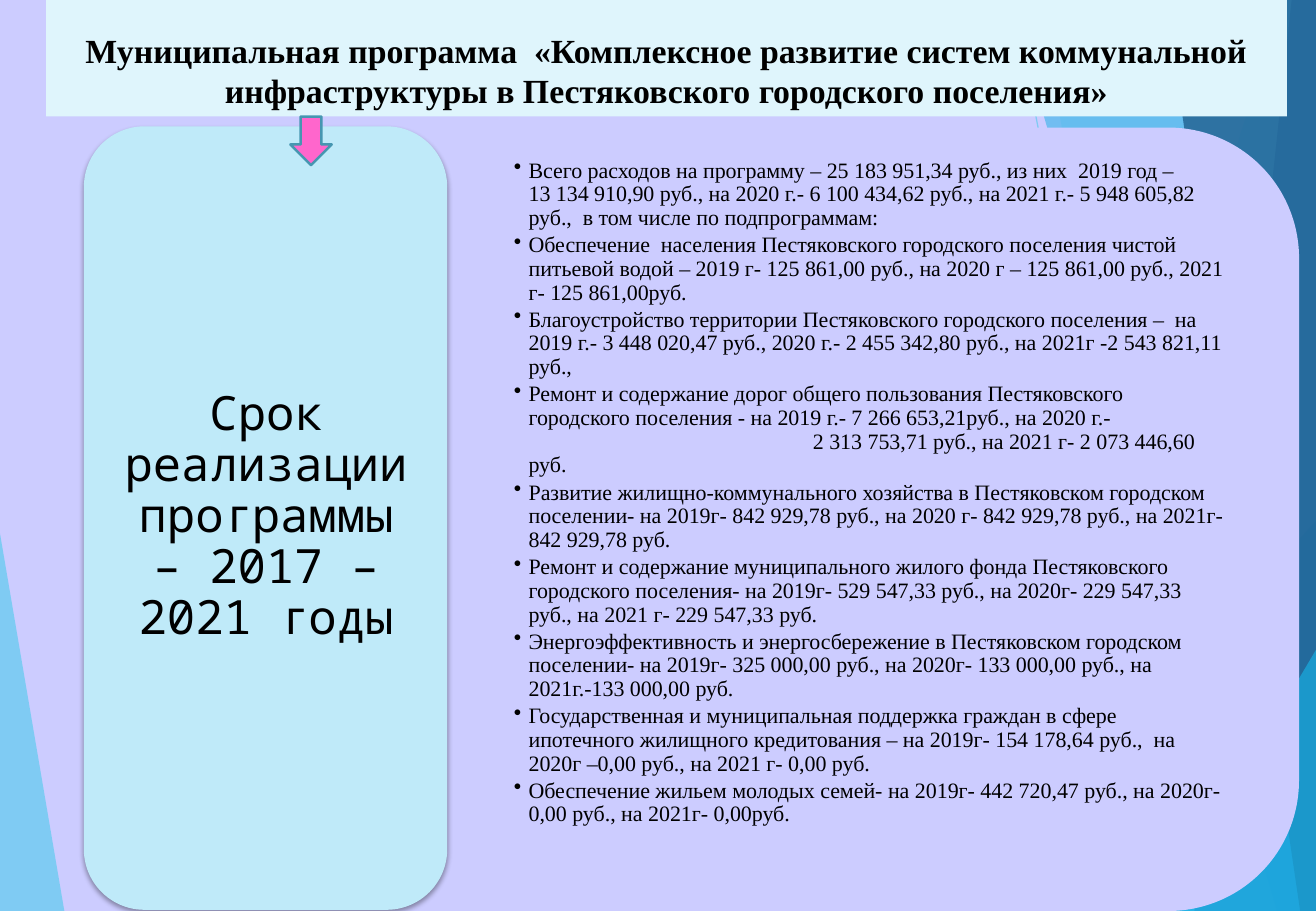
from lxml import etree
from pptx import Presentation
from pptx.dml.color import RGBColor
from pptx.enum.shapes import MSO_CONNECTOR, MSO_SHAPE
from pptx.enum.text import MSO_ANCHOR as Anchor, PP_ALIGN as Align
from pptx.oxml.ns import qn
from pptx.util import Inches, Pt

LAVENDER = RGBColor(0xCC, 0xCC, 0xFF)
SKY = RGBColor(0x5F, 0xCB, 0xEF)
AZURE = RGBColor(0x17, 0xB0, 0xE4)
BLUE = RGBColor(0x2E, 0x83, 0xC3)
NAVY = RGBColor(0x22, 0x62, 0x92)
TITLE_FILL = RGBColor(0xDF, 0xF5, 0xFC)
PERIOD_FILL = RGBColor(0xBF, 0xEA, 0xF9)
PINK = RGBColor(0xFF, 0x66, 0xCC)
ARROW_EDGE = RGBColor(0x46, 0x96, 0xB1)
BLACK = RGBColor(0, 0, 0)

SERIF = "Times New Roman"
MONO = "Noto Sans Mono"
WIDTH, HEIGHT = 10.83, 7.5

LEFT_FACET = ([(0, 4.39), (0.53, HEIGHT), (0, HEIGHT)], SKY, 70)
RAYS = [((6.08, HEIGHT), (WIDTH, 4.57)), ((8.34, 0), (9.79, HEIGHT))]
CORNER = (WIDTH, HEIGHT)
RIGHT_FACETS = [
    ([(10.56, 0), (8.17, HEIGHT), CORNER, (WIDTH, 0)], SKY, 36),
    ([(8.54, 0), (9.96, HEIGHT), CORNER, (WIDTH, 0)], SKY, 20),
    ([(7.86, HEIGHT), (WIDTH, 4.29), CORNER], AZURE, 66),
    ([(8.31, 0), (10.51, HEIGHT), CORNER, (WIDTH, 0)], AZURE, 50),
    ([(10.63, 0), (9.83, HEIGHT), CORNER, (WIDTH, 0)], BLUE, 70),
    ([(9.59, 0), (10.7, HEIGHT), CORNER, (WIDTH, 0)], NAVY, 82),
    ([(9.56, HEIGHT), (WIDTH, 5.35), CORNER], AZURE, 66),
]

TITLE = ("Муниципальная программа  «Комплексное развитие систем коммунальной "
         "инфраструктуры в Пестяковского городского поселения»")
PERIOD = "Срок реализации программы – 2017 – 2021 годы"
EXPENSES = [
    "Всего расходов на программу – 25 183 951,34 руб., из них  2019 год –\v"
    "13 134 910,90 руб., на 2020 г.- 6 100 434,62 руб., на 2021 г.- 5 948 605,82 руб.,  "
    "в том числе по подпрограммам:",
    "Обеспечение  населения Пестяковского городского поселения чистой питьевой водой – "
    "2019 г- 125 861,00 руб., на 2020 г – 125 861,00 руб., 2021 г- 125 861,00руб.",
    "Благоустройство территории Пестяковского городского поселения –  на 2019 г.- "
    "3 448 020,47 руб., 2020 г.- 2 455 342,80 руб., на 2021г -2 543 821,11 руб.,",
    "Ремонт и содержание дорог общего пользования Пестяковского городского поселения - "
    "на 2019 г.- 7 266 653,21руб., на 2020 г.-\v\t"
    "2 313 753,71 руб., на 2021 г- 2 073 446,60 руб.",
    "Развитие жилищно-коммунального хозяйства в Пестяковском городском поселении- "
    "на 2019г- 842 929,78 руб., на 2020 г- 842 929,78 руб., на 2021г- 842 929,78 руб.",
    "Ремонт и содержание муниципального жилого фонда Пестяковского городского поселения- "
    "на 2019г- 529 547,33 руб., на 2020г- 229 547,33 руб., на 2021 г- 229 547,33 руб.",
    "Энергоэффективность и энергосбережение в Пестяковском городском поселении- "
    "на 2019г- 325 000,00 руб., на 2020г- 133 000,00 руб., на 2021г.-133 000,00 руб.",
    "Государственная и муниципальная поддержка граждан в сфере ипотечного жилищного "
    "кредитования – на 2019г- 154 178,64 руб.,  на 2020г –0,00 руб., на 2021 г- 0,00 руб.",
    "Обеспечение жильем молодых семей- на 2019г- 442 720,47 руб., на 2020г- 0,00 руб., "
    "на 2021г- 0,00руб.",
]


def add_child(parent, tag, **attributes):
    return etree.SubElement(parent, qn(tag), {k: str(v) for k, v in attributes.items()})


def set_opacity(element, percent):
    color = next(element.iter(qn("a:srgbClr")))
    add_child(color, "a:alpha", val=percent * 1000)


def paint(shape, color):
    shape.shadow.inherit = False
    shape.fill.solid()
    shape.fill.fore_color.rgb = color
    shape.line.fill.background()


def add_facet(page, points, color, opacity):
    builder = page.shapes.build_freeform(*map(Inches, points[0]))
    builder.add_line_segments([(Inches(x), Inches(y)) for x, y in points[1:]])
    facet = builder.convert_to_shape()
    paint(facet, color)
    set_opacity(facet.fill._xPr, opacity)


def add_ray(page, start, end):
    ray = page.shapes.add_connector(MSO_CONNECTOR.STRAIGHT, *map(Inches, start + end))
    ray.line.color.rgb = SKY
    ray.line.width = Pt(0.75)
    properties = ray._element.spPr
    set_opacity(properties, 70)
    add_child(properties, "a:effectLst")


def add_panel(page, kind, place, color):
    panel = page.shapes.add_shape(kind, *map(Inches, place))
    paint(panel, color)
    return panel


def add_soft_shadow(shape):
    effects = shape._element.spPr.find(qn("a:effectLst"))
    shadow = add_child(effects, "a:outerShdw", blurRad=Pt(3), dist=Pt(2),
                       dir=90 * 60000, rotWithShape=0)
    add_child(add_child(shadow, "a:srgbClr", val="000000"), "a:alpha", val=35000)


def add_bullet(para, tab):
    """Hang a round bullet and set the tab stop for an indented line."""
    properties = para._p.get_or_add_pPr()
    properties.set("marL", str(Inches(0.12)))
    properties.set("indent", str(Inches(-0.12)))
    add_child(properties, "a:buChar", char="•")
    add_child(add_child(properties, "a:tabLst"), "a:tab", pos=Inches(tab), algn="l")


def write(frame, texts, size, font=SERIF, bold=False, align=Align.LEFT,
          anchor=Anchor.MIDDLE, margins=(0.1, 0.05), spacing=None, after=0, bullet_tab=None):
    frame.word_wrap = True
    frame.vertical_anchor = anchor
    frame.margin_left = frame.margin_right = Inches(margins[0])
    frame.margin_top = frame.margin_bottom = Inches(margins[1])
    for index, text in enumerate(texts):
        para = frame.add_paragraph() if index else frame.paragraphs[0]
        para.text = text
        para.alignment = align
        para.line_spacing = spacing
        para.space_after = Pt(after)
        if bullet_tab:
            add_bullet(para, bullet_tab)
        for span in para.runs:
            span.font.size = Pt(size)
            span.font.name = font
            span.font.bold = bold
            span.font.color.rgb = BLACK


def add_text(page, place, texts, **text_format):
    box = page.shapes.add_textbox(*map(Inches, place))
    write(box.text_frame, texts, **text_format)


def main():
    deck = Presentation()
    deck.slide_width, deck.slide_height = Inches(WIDTH), Inches(HEIGHT)
    page = deck.slides.add_slide(deck.slide_layouts[6])
    page.background.fill.solid()
    page.background.fill.fore_color.rgb = LAVENDER

    add_facet(page, *LEFT_FACET)
    for start, end in RAYS:
        add_ray(page, start, end)
    for facet in RIGHT_FACETS:
        add_facet(page, *facet)

    title = add_panel(page, MSO_SHAPE.RECTANGLE, (0.38, 0, 10.21, 0.96), TITLE_FILL)
    write(title.text_frame, [TITLE], size=20, bold=True, align=Align.CENTER,
          anchor=Anchor.BOTTOM)

    expenses = add_panel(page, MSO_SHAPE.ROUND_2_SAME_RECTANGLE, (4.1, 0.91, 6.45, 6.73),
                         LAVENDER)
    expenses.rotation = 90
    add_text(page, (3.96, 1.31, 6.41, 5.55), EXPENSES, size=13, anchor=Anchor.TOP,
             margins=(0.27, 0), spacing=0.9, after=2, bullet_tab=2.46)

    period = add_panel(page, MSO_SHAPE.ROUNDED_RECTANGLE, (0.69, 1.04, 2.99, 6.45), PERIOD_FILL)
    add_soft_shadow(period)
    add_text(page, (0.84, 1.18, 2.7, 6.16), [PERIOD], size=28, font=MONO,
             align=Align.CENTER, margins=(0.12, 0.06), spacing=0.9)

    arrow = add_panel(page, MSO_SHAPE.DOWN_ARROW, (2.39, 0.96, 0.34, 0.4), PINK)
    arrow.line.color.rgb = ARROW_EDGE
    arrow.line.width = Pt(1.5)

    deck.save("out.pptx")


if __name__ == "__main__":
    main()
